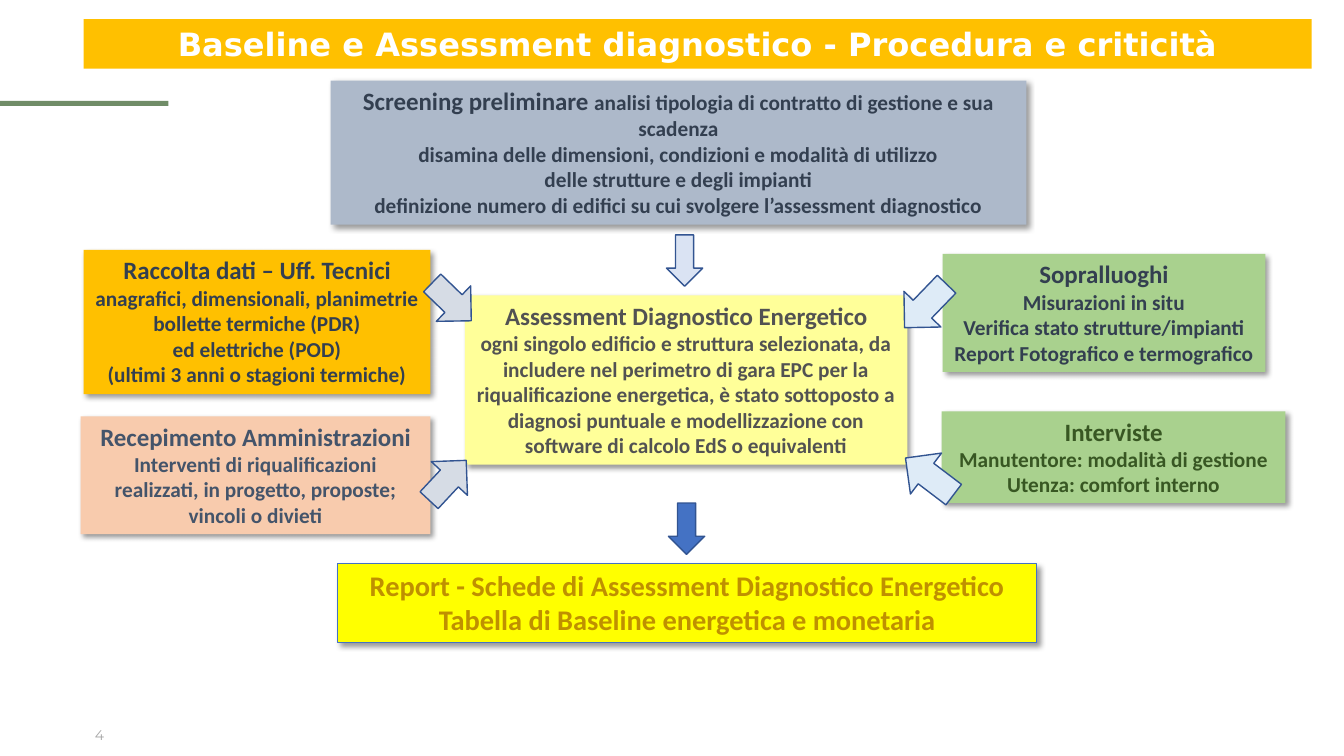
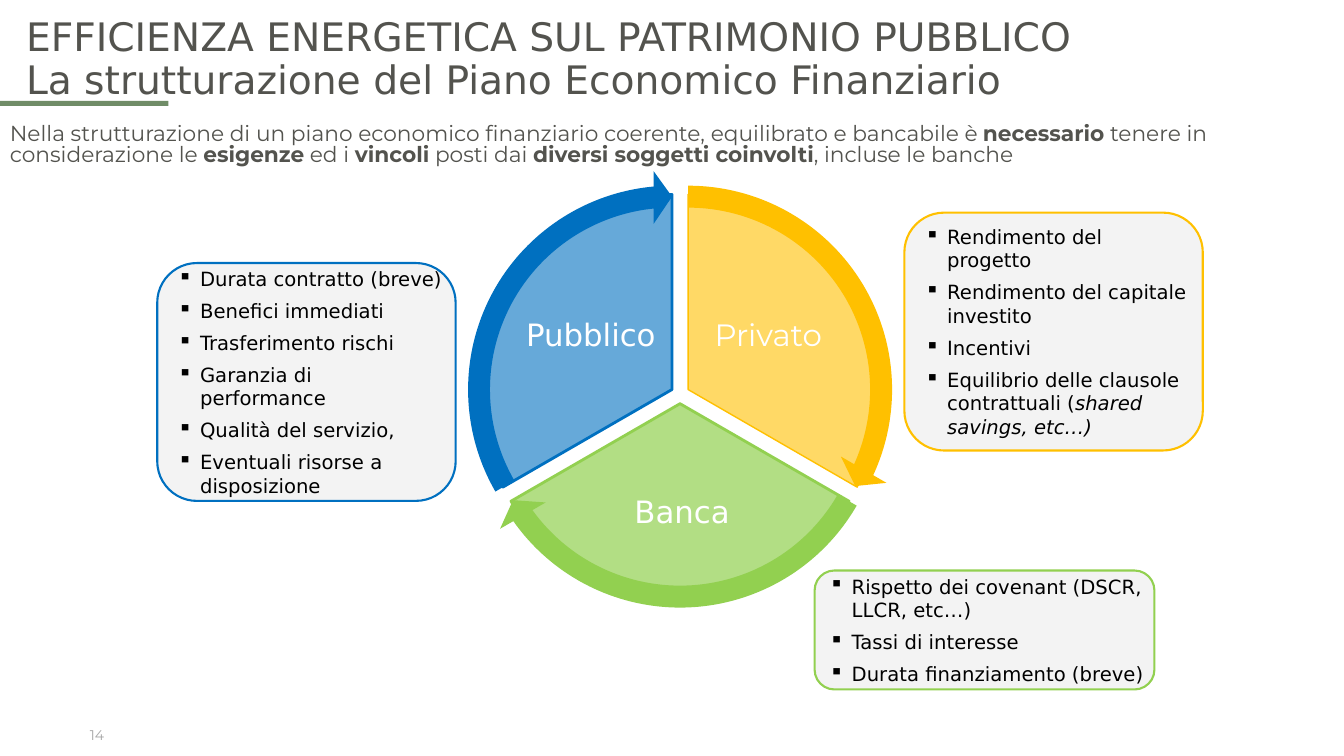
from lxml.etree import SubElement
from pptx import Presentation
from pptx.dml.color import RGBColor
from pptx.enum.shapes import MSO_SHAPE as Shape
from pptx.enum.text import MSO_ANCHOR as Anchor, PP_ALIGN as Align
from pptx.oxml.ns import qn
from pptx.util import Inches, Pt

COLORS = {
    "white": "FFFFFF", "black": "000000", "text": "53534E", "number": "A6A6A6",
    "accent": "708C67", "amber": "FFC000", "cream": "FFFF99", "yellow": "FFFF00",
    "peach": "F8CBAD", "sage": "A9D18E", "steel": "ADB9CA", "panel": "D9D9D9",
    "navy": "333F50", "slate": "44546A", "gray": "525252", "forest": "385723",
    "gold": "BF9000", "blue": "4472C4", "outline": "325491", "pale": "DAE3F3",
    "ice": "DEEBF7", "mist": "D6DCE5", "public": "0070C0", "bank": "92D050",
}
SANS, BODY, BOX = "DejaVu Sans", "Montserrat", "Calibri"
HEADING = {"size": 17.8}
BOLD = {"bold": True}


def rgb(name):
    return RGBColor.from_string(COLORS[name])


class Deck:
    """Holds the shared style and the slide being filled."""

    def __init__(self):
        self.presentation = Presentation()
        self.presentation.slide_width = Inches(13.33)
        self.presentation.slide_height = Inches(7.5)
        self.slide = None

    def new_slide(self, number):
        self.slide = self.presentation.slides.add_slide(self.presentation.slide_layouts[6])
        self.shape(Shape.RECTANGLE, (0, 1, 1.67, 0.05), "accent")
        self.text((0.65, 7.16, 0.48, 0.27), [[number]], anchor=Anchor.MIDDLE,
                  align=Align.RIGHT, size=10, font=BODY, color="number")

    def shape(self, kind, at, fill, line=None, width=1, opacity=None, rotation=0, adjust=()):
        shape = self.slide.shapes.add_shape(kind, *map(Inches, at))
        shape.shadow.inherit = False
        shape.rotation = rotation
        for index, value in enumerate(adjust):
            shape.adjustments[index] = value
        shape.fill.solid()
        shape.fill.fore_color.rgb = rgb(fill)
        if opacity:
            color = shape.element.spPr.find(qn("a:solidFill"))[0]
            SubElement(color, qn("a:alpha"), val=str(opacity * 1000))
        if line:
            shape.line.color.rgb = rgb(line)
            shape.line.width = Pt(width)
        else:
            shape.line.fill.background()
        return shape

    def drop_shadow(self, shape):
        effects = shape.element.spPr.find(qn("a:effectLst"))
        shadow = SubElement(effects, qn("a:outerShdw"), blurRad=str(Pt(4)),
                            dist=str(Pt(3)), dir="2700000", algn="tl", rotWithShape="0")
        color = SubElement(shadow, qn("a:srgbClr"), val=COLORS["black"])
        SubElement(color, qn("a:alpha"), val="40000")

    def fill_text(self, frame, paragraphs, anchor=Anchor.TOP, wrap=True, inset=None,
                  align=Align.LEFT, spacing=None, after=None, bullet=None, **style):
        """Fill a text frame; a run is a string or a (string, style changes) pair."""
        frame.word_wrap = wrap
        frame.vertical_anchor = anchor
        if inset is not None:
            frame.margin_left = frame.margin_right = Inches(inset)
            frame.margin_top = frame.margin_bottom = Inches(inset)
        for index, runs in enumerate(paragraphs):
            paragraph = frame.add_paragraph() if index else frame.paragraphs[0]
            if bullet:
                properties = paragraph._p.get_or_add_pPr()
                properties.set("marL", str(Inches(0.31)))
                properties.set("indent", str(Inches(-0.22)))
                SubElement(properties, qn("a:buChar"), char=bullet)
            paragraph.alignment = align
            if spacing:
                paragraph.line_spacing = spacing
            if after:
                paragraph.space_after = Pt(after)
            for run in runs:
                text, changes = (run, {}) if isinstance(run, str) else run
                self.add_run(paragraph, text, **{**style, **changes})

    def add_run(self, paragraph, text, size, font, color, bold=False, italic=False):
        for index, line in enumerate(text.split("\n")):
            if index:
                paragraph.add_line_break()
            run = paragraph.add_run()
            run.text = line
            run.font.size = Pt(size)
            run.font.name = font
            run.font.bold = bold
            run.font.italic = italic
            run.font.color.rgb = rgb(color)

    def text(self, at, paragraphs, **style):
        box = self.slide.shapes.add_textbox(*map(Inches, at))
        self.fill_text(box.text_frame, paragraphs, **style)

    def banner(self, title):
        shape = self.shape(Shape.RECTANGLE, (0.83, 0.19, 12.18, 0.49), "amber")
        self.fill_text(shape.text_frame, [[title]], align=Align.CENTER, size=22.9,
                       font=SANS, color="white", bold=True)

    def step(self, at, fill, color, paragraphs, size=15.2, line=None, wrap=True):
        """Shadowed box for one step of the procedure."""
        shape = self.shape(Shape.RECTANGLE, at, fill, line, 0.75)
        self.drop_shadow(shape)
        self.fill_text(shape.text_frame, paragraphs, wrap=wrap, align=Align.CENTER,
                       size=size, font=BOX, color=color, bold=True)

    def arrow(self, kind, at, fill, rotation=0):
        self.shape(kind, at, fill, "outline", rotation=rotation)

    def sector(self, left, top, color, start, end, width, opacity):
        self.shape(Shape.PIE, (left, top, 3.87, 3.87), color, color, width, opacity,
                   adjust=(start, end))

    def sector_label(self, at, label, font):
        self.text(at, [[label]], anchor=Anchor.MIDDLE, inset=0.03, align=Align.CENTER,
                  spacing=0.9, size=22, font=font, color="white")

    def ring(self, left, top, color, start, end):
        self.shape(Shape.CIRCULAR_ARROW, (left, top, 4.35, 4.35), color,
                   adjust=(0.05, 3.28, end, start, 0.06))

    def needs(self, at, color, paragraphs):
        """Rounded panel listing what one party asks for."""
        shape = self.shape(Shape.ROUNDED_RECTANGLE, at, "panel", color, 1.5, 30)
        self.fill_text(shape.text_frame, paragraphs, anchor=Anchor.MIDDLE, inset=0, after=6,
                       bullet="▪", size=14, font=SANS, color="black")


def build_procedure(deck):
    deck.new_slide("4")
    deck.step((0.83, 2.48, 3.44, 1.43), "amber", "navy", [
        [("Raccolta dati – Uff. Tecnici", HEADING)],
        ["anagrafici, dimensionali, planimetrie"],
        ["bollette termiche (PDR)"],
        ["ed elettriche (POD)"],
        ["(ultimi 3 anni o stagioni termiche)"],
    ], wrap=False)
    deck.step((4.61, 2.93, 4.39, 1.68), "cream", "gray", [
        [("Assessment Diagnostico Energetico", HEADING)],
        ["ogni singolo edificio e struttura selezionata, da includere nel perimetro di gara "
         "EPC per la riqualificazione energetica, è stato sottoposto a diagnosi puntuale e "
         "modellizzazione con software di calcolo EdS o equivalenti"],
    ])
    deck.step((9.34, 4.08, 3.41, 0.91), "sage", "forest", [
        [("Interviste", HEADING)],
        ["Manutentore: modalità di gestione"],
        ["Utenza: comfort interno"],
    ])
    deck.step((3.35, 5.59, 6.93, 0.78), "yellow", "gold", [
        ["Report - Schede di Assessment Diagnostico Energetico"],
        ["Tabella di Baseline energetica e monetaria"],
    ], size=20.3, line="blue")
    deck.step((0.8, 4.13, 3.47, 1.17), "peach", "slate", [
        [("Recepimento Amministrazioni", HEADING)],
        ["Interventi di riqualificazioni realizzati, in progetto, proposte; vincoli o divieti"],
    ])
    deck.step((9.35, 2.52, 3.2, 1.17), "sage", "navy", [
        [("Sopralluoghi", HEADING)],
        ["Misurazioni in situ"],
        ["Verifica stato strutture/impianti"],
        ["Report Fotografico e termografico"],
    ], wrap=False)
    deck.step((3.28, 0.8, 6.9, 1.43), "steel", "navy", [
        [("Screening preliminare ", HEADING),
         "analisi tipologia di contratto di gestione e sua scadenza"],
        ["disamina delle dimensioni, condizioni e modalità di utilizzo"],
        ["delle strutture e degli impianti"],
        ["definizione numero di edifici su cui svolgere l’assessment diagnostico"],
    ])
    deck.banner("Baseline e Assessment diagnostico - Procedura e criticità")
    deck.arrow(Shape.DOWN_ARROW, (6.61, 2.33, 0.36, 0.51), "pale")
    deck.arrow(Shape.DOWN_ARROW, (6.63, 4.99, 0.36, 0.51), "blue")
    for at, fill, rotation in (
        ((8.88, 2.78, 0.6, 0.51), "ice", 134),
        ((8.92, 4.47, 0.6, 0.51), "ice", 217.2),
        ((4.21, 2.75, 0.54, 0.49), "mist", 44.1),
        ((4.17, 4.52, 0.54, 0.49), "mist", 313),
    ):
        deck.arrow(Shape.RIGHT_ARROW, at, fill, rotation)


def build_financial_plan(deck):
    deck.new_slide("14")
    deck.text((0.16, 0.13, 11.42, 1.06), [[
        "EFFICIENZA ENERGETICA SUL PATRIMONIO PUBBLICO\n"
        "La strutturazione del Piano Economico Finanziario",
    ]], spacing=0.9, size=28, font=SANS, color="text")
    deck.text((0, 1.19, 12.64, 0.54), [[
        "Nella strutturazione di un piano economico finanziario coerente, equilibrato e "
        "bancabile è ", ("necessario", BOLD), " tenere in considerazione le ",
        ("esigenze", BOLD), " ed i ", ("vincoli", BOLD), " posti dai ",
        ("diversi soggetti coinvolti", BOLD), ", incluse le banche",
    ]], spacing=0.8, size=15.5, font=BODY, color="text")

    deck.sector(4.89, 1.93, "amber", 162, 18, 1, 60)
    deck.sector(4.81, 2.07, "bank", 18, 90, 2, 70)
    deck.sector(4.73, 1.93, "public", 90, 162, 2, 60)
    deck.sector_label((6.93, 2.76, 1.38, 1.15), "Privato", BODY)
    deck.sector_label((5.73, 4.59, 2.07, 1.01), "Banca", SANS)
    deck.sector_label((5.17, 2.76, 1.38, 1.15), "Pubblico", SANS)
    deck.ring(4.65, 1.69, "amber", 161.99, 14.72)
    deck.ring(4.57, 1.83, "bank", 18, 86.72)
    deck.ring(4.49, 1.69, "public", 90, 158.73)

    deck.needs((1.56, 2.61, 2.96, 2.36), "public", [
        ["Durata contratto (breve)"], ["Benefici immediati"], ["Trasferimento rischi"],
        ["Garanzia di performance"], ["Qualità del servizio,"],
        ["Eventuali risorse a disposizione"],
    ])
    deck.needs((8.97, 2.11, 2.96, 2.36), "amber", [
        ["Rendimento del progetto"], ["Rendimento del capitale investito"], ["Incentivi"],
        ["Equilibrio delle clausole contrattuali (",
         ("shared savings, etc…)", {"italic": True})],
    ])
    deck.needs((8.08, 5.66, 3.37, 1.18), "bank", [
        ["Rispetto dei covenant (DSCR, LLCR, etc…)"], ["Tassi di interesse"],
        ["Durata finanziamento (breve)"],
    ])


def main():
    deck = Deck()
    build_procedure(deck)
    build_financial_plan(deck)
    deck.presentation.save("out.pptx")


if __name__ == "__main__":
    main()
